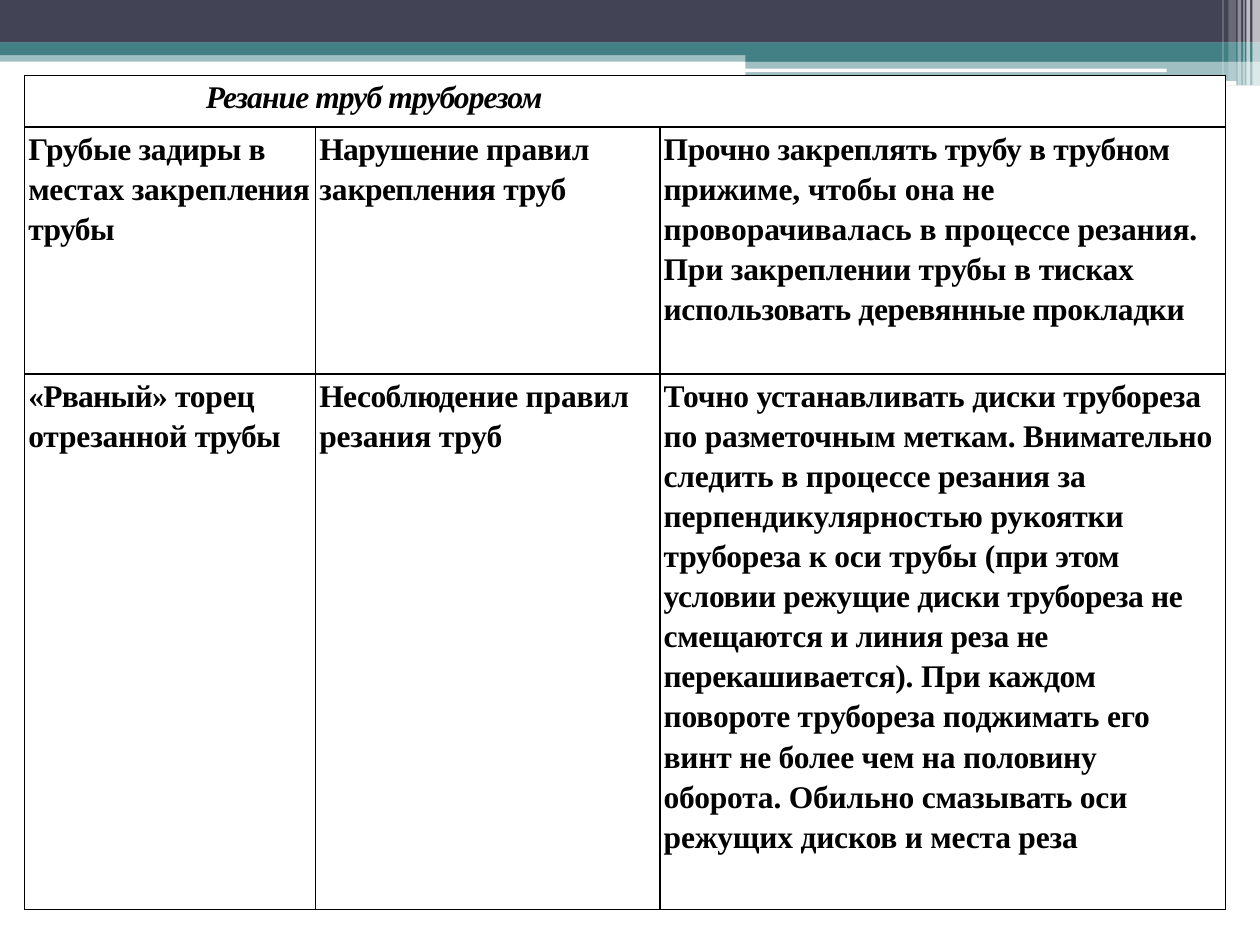
"""Builds a slide with a table of pipe-cutting defects, causes and remedies."""
from lxml.etree import SubElement
from pptx import Presentation
from pptx.dml.color import RGBColor as Rgb
from pptx.enum.shapes import MSO_SHAPE as Shape
from pptx.oxml import parse_xml
from pptx.oxml.ns import nsdecls, qn
from pptx.util import Pt

THEME = {
    "navy": "424456", "teal": "438086", "white": "FFFFFF", "ink": "000000",
    "font": "Times New Roman", "size": 18, "line_spacing": 1.15, "border": 1,
}

HEADING = [("Резание труб труборезом", -0.5)]
DEFECTS = [
    [
        [("Грубые задиры в мес", -0.2), ("тах закреп", -0.1), ("ления трубы", -0.3)],
        [("Нарушение ", -0.3), ("правил за", -0.1), ("крепления ", -0.3), ("труб", -0.2)],
        [("Прочно закреплять трубу в трубном прижи", -0.2),
         ("ме, чтобы она не проворачивалась в про", 0),
         ("цессе резания. При закреплении трубы в ", -0.1),
         ("тисках использовать деревянные прокладки", -0.2)],
    ],
    [
        [("«Рваный» ", -0.4), ("торец отре", -0.1), ("занной ", -0.2), ("трубы", -0.4)],
        [("Несоблюде", -0.3), ("ние правил резания труб", -0.1)],
        [("Точно устанавливать диски трубореза по разметочным меткам. Внимательно "
          "следить в процессе резания за перпендикулярностью рукоятки трубореза "
          "к оси трубы ", -0.1),
         ("(при этом условии режущие диски трубореза не смещаются и линия реза "
          "не перекаши", -0.2),
         ("вается). При каждом повороте трубореза поджимать его винт не более чем "
          "на половину оборота. Обильно смазывать оси режущих дисков и места реза", -0.1)],
    ],
]

SLIDE_WIDTH, SLIDE_HEIGHT = 720, 540
TABLE_LEFT, TABLE_TOP = 14, 43.2
COLUMN_WIDTHS = [166.3, 196.8, 323.3]
ROW_HEIGHTS = [29.5, 141, 306]
HEADING_INDENT = 101.5
CELL_INSETS = {"margin_left": 2.2, "margin_right": 2.2, "margin_top": 0, "margin_bottom": 0}

STEP_LEFT = 426
BANDS = [
    (0, 28.8, SLIDE_WIDTH, 6.5, "teal", 50),
    (0, 0, SLIDE_WIDTH, 24.4, "navy", 100),
    (0, 24.3, SLIDE_WIDTH, 7.2, "teal", 100),
    (STEP_LEFT, 28.3, SLIDE_WIDTH - STEP_LEFT, 7, "teal", 100),
    (STEP_LEFT, 34.6, SLIDE_WIDTH - STEP_LEFT, 14.2, "teal", 50),
]
PILLS = [(425.5, 39.2, 241.2, 2), (580.5, 46.3, 126, 2.6)]
STRIPES = [
    (715.7, 4.3, 48.8, 65), (712.2, 2.2, 48.8, 65), (710.5, 0.7, 48.8, 60),
    (707.2, 2, 48.8, 40), (702, 4.3, 46, 20), (698.5, 0.7, 46, 30),
]


def add_bar(slide, kind, left, top, width, height, color, opacity=100):
    bar = slide.shapes.add_shape(kind, Pt(left), Pt(top), Pt(width), Pt(height))
    bar.shadow.inherit = False
    bar.line.fill.background()
    bar.fill.solid()
    bar.fill.fore_color.rgb = Rgb.from_string(THEME[color])
    if opacity < 100:
        tint = bar.fill._xPr.find(".//" + qn("a:srgbClr"))
        SubElement(tint, qn("a:alpha"), val=str(opacity * 1000))


def add_header_band(slide):
    for band in BANDS:
        add_bar(slide, Shape.RECTANGLE, *band)
    for pill in PILLS:
        add_bar(slide, Shape.ROUNDED_RECTANGLE, *pill, "white")
    for left, width, height, opacity in STRIPES:
        add_bar(slide, Shape.RECTANGLE, left, 0, width, height, "white", opacity)


def format_cell(cell):
    for inset, value in CELL_INSETS.items():
        setattr(cell, inset, Pt(value))
    properties = cell._tc.get_or_add_tcPr()
    for side in ("lnL", "lnR", "lnT", "lnB"):
        properties.append(parse_xml(
            f'<a:{side} {nsdecls("a")} w="{Pt(THEME["border"])}"><a:solidFill>'
            f'<a:srgbClr val="{THEME["ink"]}"/></a:solidFill></a:{side}>'))
    cell.fill.solid()
    cell.fill.fore_color.rgb = Rgb.from_string(THEME["white"])


def write_cell(cell, phrases, italic=False):
    paragraph = cell.text_frame.paragraphs[0]
    paragraph.line_spacing = THEME["line_spacing"]
    font_format = {"name": THEME["font"], "size": Pt(THEME["size"]),
                   "bold": True, "italic": italic}
    for words, tracking in phrases:
        run = paragraph.add_run()
        run.text = words
        for attribute, value in font_format.items():
            setattr(run.font, attribute, value)
        run.font.color.rgb = Rgb.from_string(THEME["ink"])
        run._r.get_or_add_rPr().set("spc", str(round(tracking * 100)))
    return paragraph


def add_defect_table(slide):
    table = slide.shapes.add_table(
        len(ROW_HEIGHTS), len(COLUMN_WIDTHS), Pt(TABLE_LEFT), Pt(TABLE_TOP),
        Pt(sum(COLUMN_WIDTHS)), Pt(sum(ROW_HEIGHTS))).table
    table.first_row = table.horz_banding = False
    for column, width in zip(table.columns, COLUMN_WIDTHS):
        column.width = Pt(width)
    for row, height in zip(table.rows, ROW_HEIGHTS):
        row.height = Pt(height)
    for cell in table.iter_cells():
        format_cell(cell)
    table.cell(0, 0).merge(table.cell(0, len(COLUMN_WIDTHS) - 1))
    heading = write_cell(table.cell(0, 0), HEADING, italic=True)
    heading._p.get_or_add_pPr().set("marL", str(Pt(HEADING_INDENT)))
    for row_index, defect in enumerate(DEFECTS, start=1):
        for column_index, phrases in enumerate(defect):
            write_cell(table.cell(row_index, column_index), phrases)


def main():
    deck = Presentation()
    deck.slide_width, deck.slide_height = Pt(SLIDE_WIDTH), Pt(SLIDE_HEIGHT)
    slide = deck.slides.add_slide(deck.slide_layouts[6])
    add_header_band(slide)
    add_defect_table(slide)
    deck.save("out.pptx")


if __name__ == "__main__":
    main()
